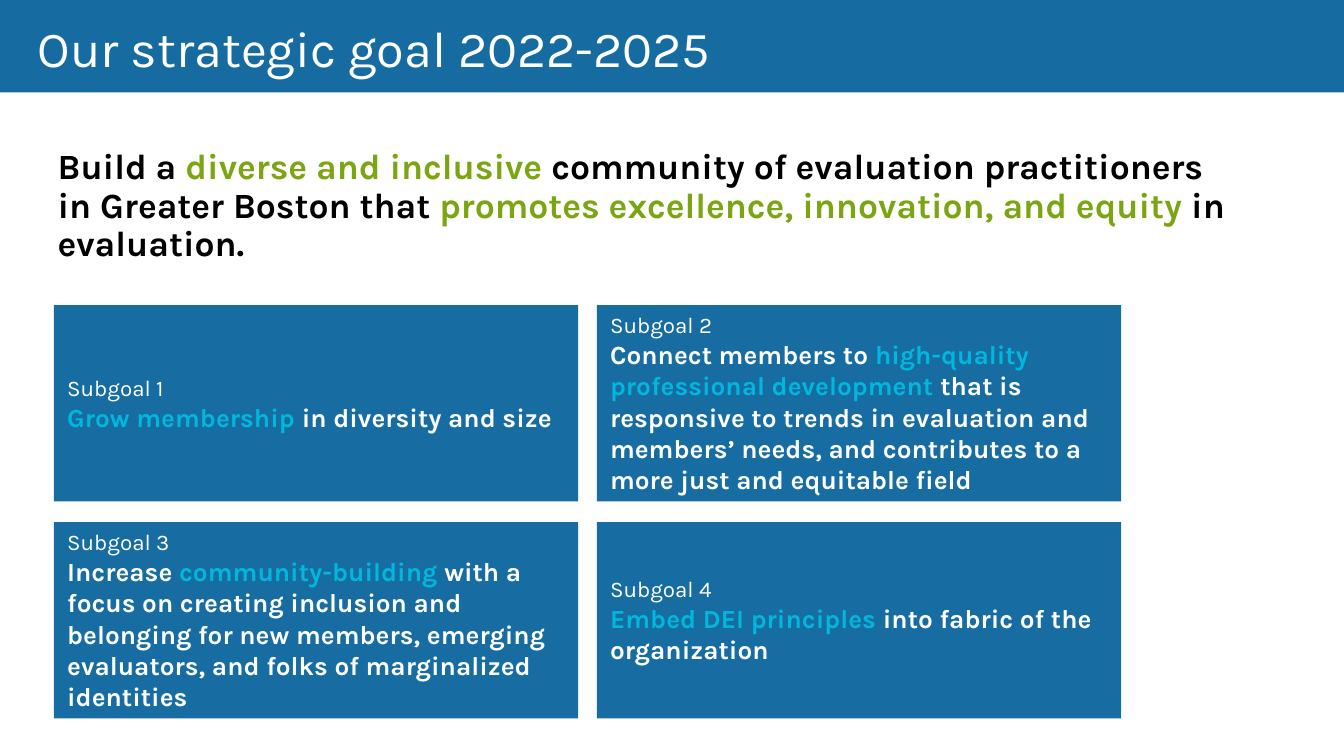
from pptx import Presentation
from pptx.dml.color import RGBColor
from pptx.enum import shapes, text
from pptx.util import Cm, Pt

# Content: each run is (wording, colour)
FONT = "Karla"
WHITE, BLACK, GREEN, CYAN = "FFFFFF", "000000", "7CA513", "00B8DE"
BAND, CARD = "166CA1", "176DA2"

TITLE = "Our strategic goal 2022-2025"
GOAL = [
    ("Build a ", BLACK),
    ("diverse and inclusive ", GREEN),
    ("community of evaluation practitioners in Greater Boston that ", BLACK),
    ("promotes excellence, innovation, and equity ", GREEN),
    ("in evaluation.", BLACK),
]
SUBGOALS = [
    [("Grow membership", CYAN), (" in diversity and size", WHITE)],
    [("Connect members to ", WHITE),
     ("high-quality professional development", CYAN),
     (" that is responsive to trends in evaluation and members’ needs, "
      "and contributes to a more just and equitable field", WHITE)],
    [("Increase ", WHITE),
     ("community-building", CYAN),
     (" with a focus on creating inclusion and belonging for new members, "
      "emerging evaluators, and folks of marginalized identities", WHITE)],
    [("Embed DEI principles", CYAN),
     (" into fabric of the organization", WHITE)],
]

# Card grid, in cm
LEFT, TOP = 1.02, 5.77
WIDE, HIGH = 9.91, 3.71
GAP_X, GAP_Y = 0.35, 0.39
COLS = 2


def color(code):
    return RGBColor.from_string(code)


def set_frame(shape, anchor):
    frame = shape.text_frame
    frame.word_wrap = True
    frame.auto_size = text.MSO_AUTO_SIZE.NONE
    frame.vertical_anchor = anchor
    frame.margin_left = frame.margin_right = Cm(0.25)
    frame.margin_top = frame.margin_bottom = Cm(0.25)
    return frame


def write(para, runs, size, bold=False):
    para.alignment = text.PP_ALIGN.LEFT
    para.font.name = FONT
    para.font.size = Pt(size)
    para.font.bold = bold
    for words, code in runs:
        run = para.add_run()
        run.text = words
        run.font.color.rgb = color(code)


def add_block(slide, left, top, width, height, fill):
    block = slide.shapes.add_shape(
        shapes.MSO_SHAPE.RECTANGLE, Cm(left), Cm(top), Cm(width), Cm(height))
    block.shadow.inherit = False
    block.fill.solid()
    block.fill.fore_color.rgb = color(fill)
    block.line.fill.background()
    return block


def main():
    deck = Presentation()
    deck.slide_width, deck.slide_height = Cm(25.4), Cm(14.29)
    slide = deck.slides.add_slide(deck.slide_layouts[5])

    # Title on its band
    title = slide.shapes.title
    band = add_block(slide, 0, -0.05, 25.4, 1.8, BAND)
    title._element.addprevious(band._element)
    title.left, title.top = Cm(0.46), Cm(0.05)
    title.width, title.height = Cm(23.67), Cm(1.68)
    frame = set_frame(title, text.MSO_ANCHOR.MIDDLE)
    write(frame.paragraphs[0], [(TITLE, WHITE)], 27)

    # Subgoal cards
    for i, runs in enumerate(SUBGOALS):
        row, col = divmod(i, COLS)
        card = add_block(slide, LEFT + col * (WIDE + GAP_X),
                         TOP + row * (HIGH + GAP_Y), WIDE, HIGH, CARD)
        frame = set_frame(card, text.MSO_ANCHOR.MIDDLE)
        write(frame.paragraphs[0], [(f"Subgoal {i + 1}", WHITE)], 12)
        write(frame.add_paragraph(), runs, 14, bold=True)

    # Goal statement
    box = slide.shapes.add_textbox(Cm(0.84), Cm(2.57), Cm(22.91), Cm(2.97))
    para = set_frame(box, text.MSO_ANCHOR.TOP).paragraphs[0]
    para.line_spacing = 0.9
    write(para, GOAL, 19, bold=True)

    deck.save("out.pptx")


if __name__ == "__main__":
    main()
